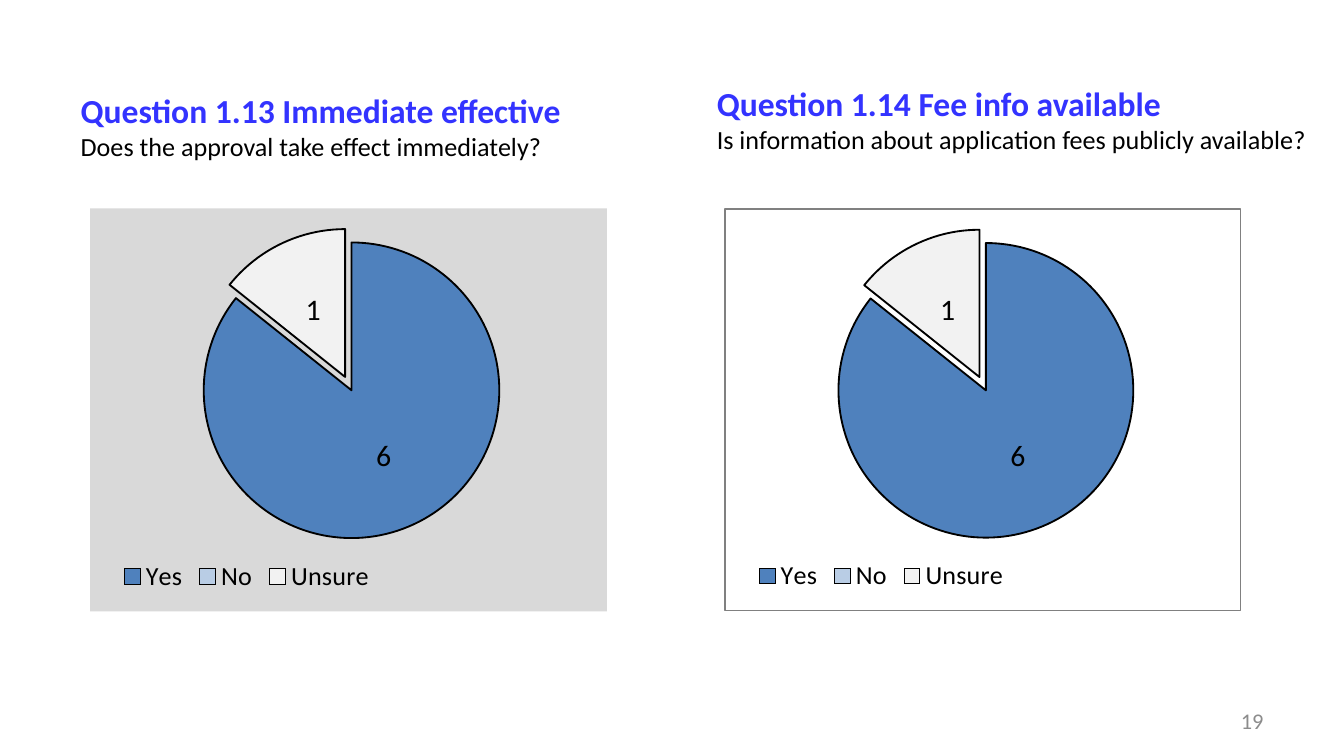
from dataclasses import dataclass

from lxml.etree import _Element
from pptx import Presentation
from pptx.chart.chart import Chart
from pptx.chart.data import CategoryChartData
from pptx.dml.color import RGBColor
from pptx.enum.chart import XL_CHART_TYPE, XL_LABEL_POSITION, XL_LEGEND_POSITION
from pptx.enum.text import MSO_ANCHOR, MSO_AUTO_SIZE, PP_ALIGN
from pptx.oxml import parse_xml
from pptx.oxml.ns import nsdecls, qn
from pptx.slide import Slide
from pptx.text.text import Font, TextFrame
from pptx.util import Emu, Pt

PX = 4572
SLIDE_WIDTH, SLIDE_HEIGHT = 2000, 1125
FONT = "Calibri"
COLORS = {
    "heading": "3333FF",
    "text": "000000",
    "number": "8C8C8C",
    "panel": "D9D9D9",
    "border": "808080",
    "Yes": "4F81BD",
    "No": "B9CDE5",
    "Unsure": "F2F2F2",
}
ANSWERS = {"Yes": 6, "No": 0, "Unsure": 1}
CHART_TOP, CHART_WIDTH, CHART_HEIGHT = 310, 769, 600
PANEL_FILL = f'<a:solidFill><a:srgbClr val="{COLORS["panel"]}"/></a:solidFill><a:ln><a:noFill/></a:ln>'
PANEL_BORDER = (
    '<a:noFill/><a:ln w="9525"><a:solidFill>'
    f'<a:srgbClr val="{COLORS["border"]}"/></a:solidFill></a:ln>'
)


@dataclass(frozen=True)
class Box:
    left: int
    top: int
    width: int
    height: int

    def emu(self) -> tuple[Emu, ...]:
        return tuple(Emu(value * PX) for value in (self.left, self.top, self.width, self.height))


@dataclass(frozen=True)
class Question:
    heading: str
    wording: str
    text_box: Box
    chart_left: int
    panel: str
    is_title: bool


QUESTIONS = [
    Question("Question 1.13 Immediate effective", "Does the approval take effect immediately?",
             Box(100, 32, 900, 310), 134, PANEL_FILL, True),
    Question("Question 1.14 Fee info available", "Is information about application fees publicly available?",
             Box(1047, 43, 945, 268), 1078, PANEL_BORDER, False),
]


def style_font(font: Font, size: int, color: str, bold: bool = False) -> None:
    font.name = FONT
    font.size = Pt(size)
    font.bold = bold
    font.color.rgb = RGBColor.from_string(COLORS[color])


def prepare_frame(frame: TextFrame) -> None:
    frame.word_wrap = True
    frame.auto_size = MSO_AUTO_SIZE.NONE
    frame.vertical_anchor = MSO_ANCHOR.MIDDLE


def add_question_text(slide: Slide, question: Question) -> None:
    if question.is_title:
        shape = slide.shapes.title
        shape.left, shape.top, shape.width, shape.height = question.text_box.emu()
    else:
        shape = slide.shapes.add_textbox(*question.text_box.emu())
    frame = shape.text_frame
    prepare_frame(frame)
    paragraph = frame.paragraphs[0]
    paragraph.alignment = PP_ALIGN.LEFT
    heading = paragraph.add_run()
    heading.text = question.heading
    style_font(heading.font, 18, "heading", True)
    if question.is_title:
        paragraph.add_line_break()
    else:
        paragraph = frame.add_paragraph()
    wording = paragraph.add_run()
    wording.text = question.wording
    style_font(wording.font, 14, "text")


def manual_layout(target: str, **fractions: float) -> _Element:
    modes = "".join(f'<c:{name}Mode val="edge"/>' for name in "xy")
    values = "".join(f'<c:{name} val="{value}"/>' for name, value in fractions.items())
    return parse_xml(
        f'<c:layout {nsdecls("c")}><c:manualLayout>{target}{modes}{values}</c:manualLayout></c:layout>'
    )


def place_chart_parts(chart: Chart) -> None:
    plot_area = chart.element.find(".//" + qn("c:plotArea"))
    legend = chart.legend._element
    for part in (plot_area, legend):
        for layout in part.findall(qn("c:layout")):
            part.remove(layout)
    inner = '<c:layoutTarget val="inner"/>'
    plot_area.insert(0, manual_layout(inner, x=0.19, y=0.05, w=0.62, h=0.77))
    legend.find(qn("c:legendPos")).addnext(manual_layout("", x=0.05, y=0.86))


def add_pie(slide: Slide, question: Question) -> None:
    data = CategoryChartData()
    data.categories = list(ANSWERS)
    data.add_series("Series 1", list(ANSWERS.values()))
    box = Box(question.chart_left, CHART_TOP, CHART_WIDTH, CHART_HEIGHT)
    chart = slide.shapes.add_chart(XL_CHART_TYPE.PIE, *box.emu(), data).chart
    chart.has_title = False
    style_font(chart.font, 10, "text")
    chart.has_legend = True
    chart.legend.position = XL_LEGEND_POSITION.BOTTOM
    chart.legend.include_in_layout = False
    style_font(chart.legend.font, 14, "text")
    chart.plots[0].vary_by_categories = True

    series = chart.plots[0].series[0]
    series.format.line.color.rgb = RGBColor.from_string(COLORS["text"])
    series.format.line.width = Pt(1)
    for index, answer in enumerate(ANSWERS):
        slice_format = series.points[index].format
        slice_format.fill.solid()
        slice_format.fill.fore_color.rgb = RGBColor.from_string(COLORS[answer])
        slice_format.line.color.rgb = RGBColor.from_string(COLORS["text"])
        slice_format.line.width = Pt(1)
    explosion = parse_xml(f'<c:explosion {nsdecls("c")} val="5"/>')
    series._element.find(qn("c:dPt")).addprevious(explosion)

    labels = series.data_labels
    labels.show_value = True
    labels.position = XL_LABEL_POSITION.CENTER
    style_font(labels.font, 16, "text")
    for index, count in enumerate(ANSWERS.values()):
        if count == 0:
            hidden = f'<c:dLbl {nsdecls("c")}><c:idx val="{index}"/><c:delete val="1"/></c:dLbl>'
            labels._element.insert(0, parse_xml(hidden))

    place_chart_parts(chart)
    panel = parse_xml(f'<c:spPr {nsdecls("c", "a")}>{question.panel}</c:spPr>')
    chart.element.find(qn("c:chart")).addnext(panel)


def add_slide_number(slide: Slide) -> None:
    frame = slide.shapes.add_textbox(*Box(1433, 1043, 467, 60).emu()).text_frame
    prepare_frame(frame)
    paragraph = frame.paragraphs[0]
    paragraph.text = "19"
    paragraph.alignment = PP_ALIGN.RIGHT
    style_font(paragraph.font, 12, "number")


def main() -> None:
    presentation = Presentation()
    presentation.slide_width = Emu(SLIDE_WIDTH * PX)
    presentation.slide_height = Emu(SLIDE_HEIGHT * PX)
    slide = presentation.slides.add_slide(presentation.slide_layouts[5])
    for question in QUESTIONS:
        add_question_text(slide, question)
    add_slide_number(slide)
    for question in QUESTIONS:
        add_pie(slide, question)
    presentation.save("out.pptx")


if __name__ == "__main__":
    main()
